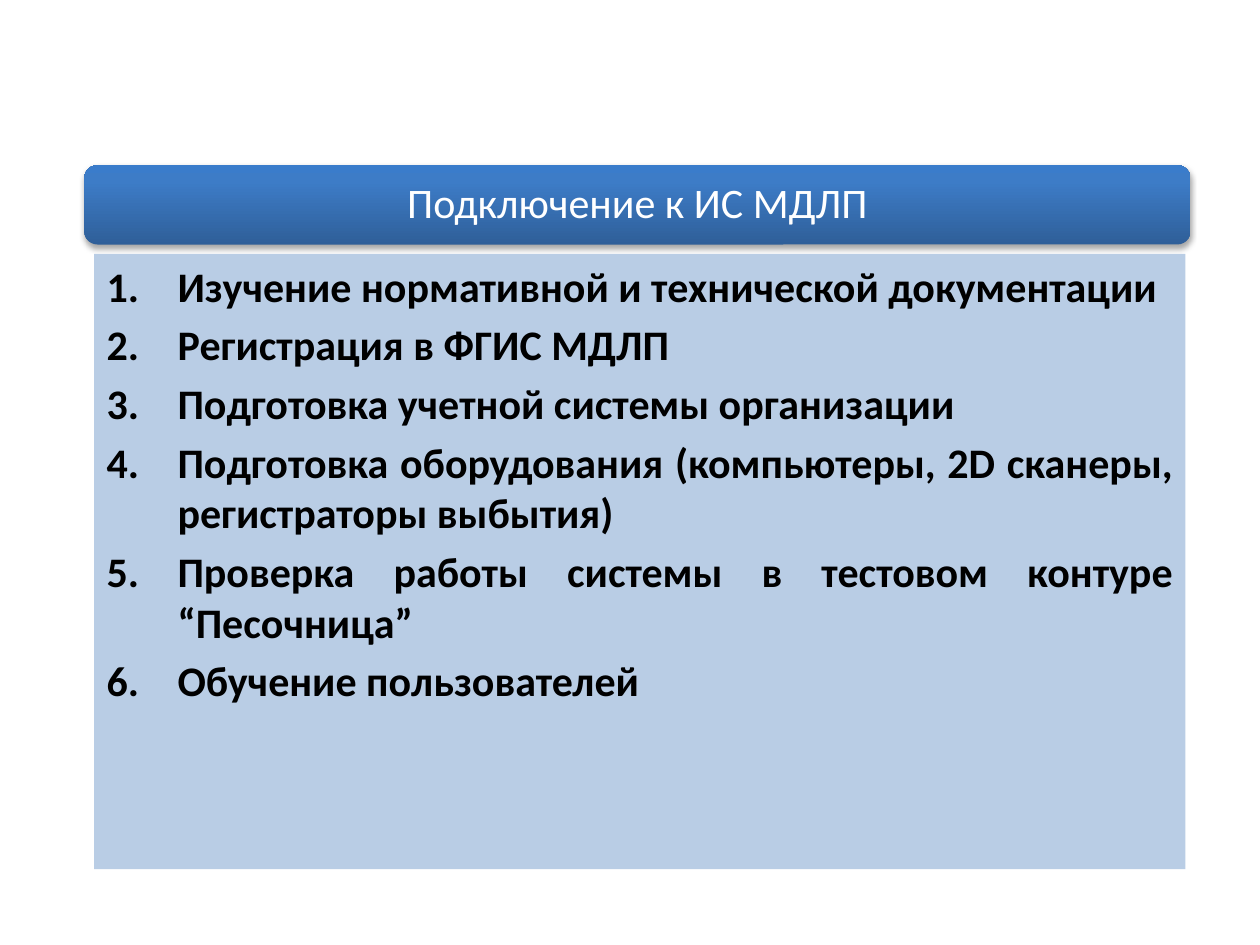
from lxml import etree
from pptx import Presentation, util as u
from pptx.dml.color import RGBColor
from pptx.enum import shapes, text
from pptx.oxml import parse_xml
from pptx.oxml.ns import nsdecls, qn

TITLE = "Подключение к ИС МДЛП"
STEPS = [
    "Изучение нормативной и технической документации",
    "Регистрация в ФГИС МДЛП",
    "Подготовка учетной системы организации",
    "Подготовка оборудования (компьютеры, 2D сканеры, регистраторы выбытия)",
    "Проверка работы системы в тестовом контуре “Песочница”",
    "Обучение пользователей",
]
COLORS = {"panel": "B9CDE5", "text": "000000", "title": "FFFFFF", "shadow": "000000"}
BANNER_STOPS = [(0, "2F5F99"), (80, "3D7CC7"), (100, "3A7CCB")]
FONT, SIZE = "Calibri", u.Pt(24)
PANEL_AT = (1.9, 5.12, 22.0, 12.4)
BANNER_AT = (1.7, 3.33, 22.3, 1.6)
TITLE_INSET = 0.08
INDENT = u.Cm(1.43)


def set_font(para, color, bold):
    font = para.font
    font.name, font.size, font.bold = FONT, SIZE, bold
    font.color.rgb = RGBColor.from_string(COLORS[color])


def add_panel(slide):
    panel = slide.shapes.add_shape(shapes.MSO_SHAPE.RECTANGLE, *map(u.Cm, PANEL_AT))
    panel.shadow.inherit = False
    panel.fill.solid()
    panel.fill.fore_color.rgb = RGBColor.from_string(COLORS["panel"])
    panel.line.fill.background()
    frame = panel.text_frame
    frame.word_wrap = True
    frame.vertical_anchor = text.MSO_ANCHOR.TOP
    for index, step in enumerate(STEPS):
        para = frame.add_paragraph() if index else frame.paragraphs[0]
        para.text = step
        para.alignment = text.PP_ALIGN.JUSTIFY
        para.space_before = u.Pt(4.8 if index else 0)
        props = para._p.get_or_add_pPr()
        props.set("marL", str(INDENT))
        props.set("indent", str(-INDENT))
        etree.SubElement(props, qn("a:buFont"), typeface="+mj-lt")
        etree.SubElement(props, qn("a:buAutoNum"), type="arabicPeriod")
        set_font(para, "text", True)


def add_banner(slide):
    """Rounded bar with a vertical gradient and a soft shadow below."""
    banner = slide.shapes.add_shape(shapes.MSO_SHAPE.ROUNDED_RECTANGLE, *map(u.Cm, BANNER_AT))
    banner.line.fill.background()
    banner.shadow.inherit = False
    stops = "".join(
        f'<a:gs pos="{percent * 1000}"><a:srgbClr val="{color}"/></a:gs>'
        for percent, color in BANNER_STOPS
    )
    props = banner.element.spPr
    props.find(qn("a:prstGeom")).addnext(parse_xml(
        f'<a:gradFill {nsdecls("a")} rotWithShape="1"><a:gsLst>{stops}</a:gsLst>'
        '<a:lin ang="16200000" scaled="0"/></a:gradFill>'))
    props.find(qn("a:effectLst")).append(parse_xml(
        f'<a:outerShdw {nsdecls("a")} blurRad="40000" dist="23000" dir="5400000" '
        f'rotWithShape="0"><a:srgbClr val="{COLORS["shadow"]}"><a:alpha val="35000"/>'
        '</a:srgbClr></a:outerShdw>'))
    return banner


def place_title(slide, banner):
    title = slide.shapes.title
    left, top, width, height = BANNER_AT
    title.left, title.top = u.Cm(left + TITLE_INSET), u.Cm(top + TITLE_INSET)
    title.width, title.height = u.Cm(width - 2 * TITLE_INSET), u.Cm(height - 2 * TITLE_INSET)
    frame = title.text_frame
    frame.text = TITLE
    frame.word_wrap = True
    frame.auto_size = text.MSO_AUTO_SIZE.NONE
    frame.vertical_anchor = text.MSO_ANCHOR.MIDDLE
    frame.margin_left = frame.margin_right = u.Cm(0.25)
    frame.margin_top = frame.margin_bottom = u.Cm(0.25)
    para = frame.paragraphs[0]
    para.alignment = text.PP_ALIGN.CENTER
    para.line_spacing = 0.9
    set_font(para, "title", False)
    banner.element.addnext(title.element)


def main():
    deck = Presentation()
    deck.slide_width, deck.slide_height = u.Cm(25.4), u.Cm(19.05)
    slide = deck.slides.add_slide(deck.slide_layouts.get_by_name("Title Only"))
    add_panel(slide)
    place_title(slide, add_banner(slide))
    deck.save("out.pptx")


if __name__ == "__main__":
    main()
